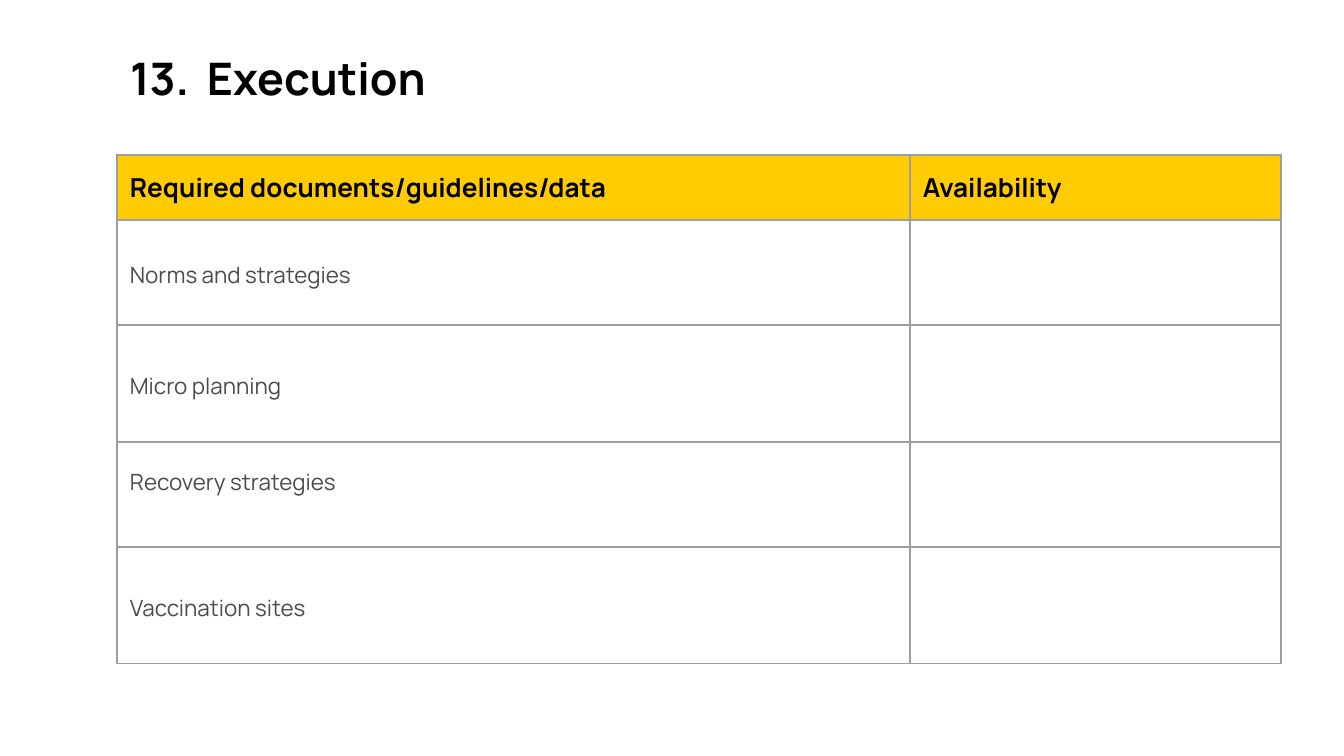
from lxml import etree
from pptx import Presentation
from pptx.dml.color import RGBColor
from pptx.enum.text import MSO_ANCHOR
from pptx.oxml.ns import qn
from pptx.util import Emu, Pt

TITLE = "13.\tExecution"
HEADER = ("Required documents/guidelines/data", "Availability")
# label, row height, bottom margin
ROWS = [
    ("Norms and strategies", 105, 13),
    ("Micro planning", 117, 13),
    ("Recovery strategies", 105, 43),
    ("Vaccination sites", 117, 13),
]
COLUMN_WIDTHS = (793, 371)
HEADER_HEIGHT = 65
LEFT, TABLE_TOP, MARGIN = 117, 155, 13
NUMBER_WIDTH = 77
FONT = "Manrope"
BLACK, GREY, BORDER, YELLOW = "000000", "4C4C4C", "9E9E9E", "FFCB03"


def px(length):
    return Emu(round(length * 914400 / 134.4))


def color(value):
    return RGBColor.from_string(value)


def write(frame, text, size=12, fill=GREY, bold=False, line_spacing=1.0):
    paragraph = frame.paragraphs[0]
    paragraph.line_spacing = line_spacing
    run = paragraph.add_run()
    run.text = text
    run.font.name = FONT
    run.font.size = Pt(size)
    run.font.bold = bold
    run.font.color.rgb = color(fill)
    return paragraph


def set_margins(box, bottom=MARGIN):
    box.margin_left = box.margin_right = box.margin_top = px(MARGIN)
    box.margin_bottom = px(bottom)


def add_borders(cell):
    properties = cell._tc.get_or_add_tcPr()
    for position, side in enumerate(("a:lnL", "a:lnR", "a:lnT", "a:lnB")):
        line = etree.Element(qn(side), w=str(Pt(0.75)))
        fill = etree.SubElement(line, qn("a:solidFill"))
        etree.SubElement(fill, qn("a:srgbClr"), val=BORDER)
        properties.insert(position, line)


def add_title(slide):
    box = slide.shapes.add_textbox(px(LEFT), px(38), px(1227), px(79))
    frame = box.text_frame
    frame.word_wrap = True
    set_margins(frame)
    paragraph = write(frame, TITLE, size=24, fill=BLACK, bold=True)
    properties = paragraph._p.get_or_add_pPr()
    properties.set("marL", str(px(NUMBER_WIDTH)))
    properties.set("indent", str(-px(NUMBER_WIDTH)))


def add_checklist(slide):
    heights = [HEADER_HEIGHT] + [height for _, height, _ in ROWS]
    table = slide.shapes.add_table(
        len(heights), len(COLUMN_WIDTHS), px(LEFT), px(TABLE_TOP),
        px(sum(COLUMN_WIDTHS)), px(sum(heights))).table
    for column, width in zip(table.columns, COLUMN_WIDTHS):
        column.width = px(width)
    for row, height in zip(table.rows, heights):
        row.height = px(height)
    for cell in table.iter_cells():
        cell.vertical_anchor = MSO_ANCHOR.MIDDLE
        set_margins(cell)
        cell.fill.background()
        add_borders(cell)
    for cell, text in zip(table.rows[0].cells, HEADER):
        cell.fill.solid()
        cell.fill.fore_color.rgb = color(YELLOW)
        write(cell.text_frame, text, size=14, fill=BLACK, bold=True)
    for index, (label, _, bottom) in enumerate(ROWS, start=1):
        cell = table.cell(index, 0)
        set_margins(cell, bottom)
        write(cell.text_frame, label, line_spacing=1.15)


def main():
    presentation = Presentation()
    presentation.slide_width = px(1344)
    presentation.slide_height = px(756)
    slide = presentation.slides.add_slide(presentation.slide_layouts[6])
    add_title(slide)
    add_checklist(slide)
    presentation.save("out.pptx")


if __name__ == "__main__":
    main()
